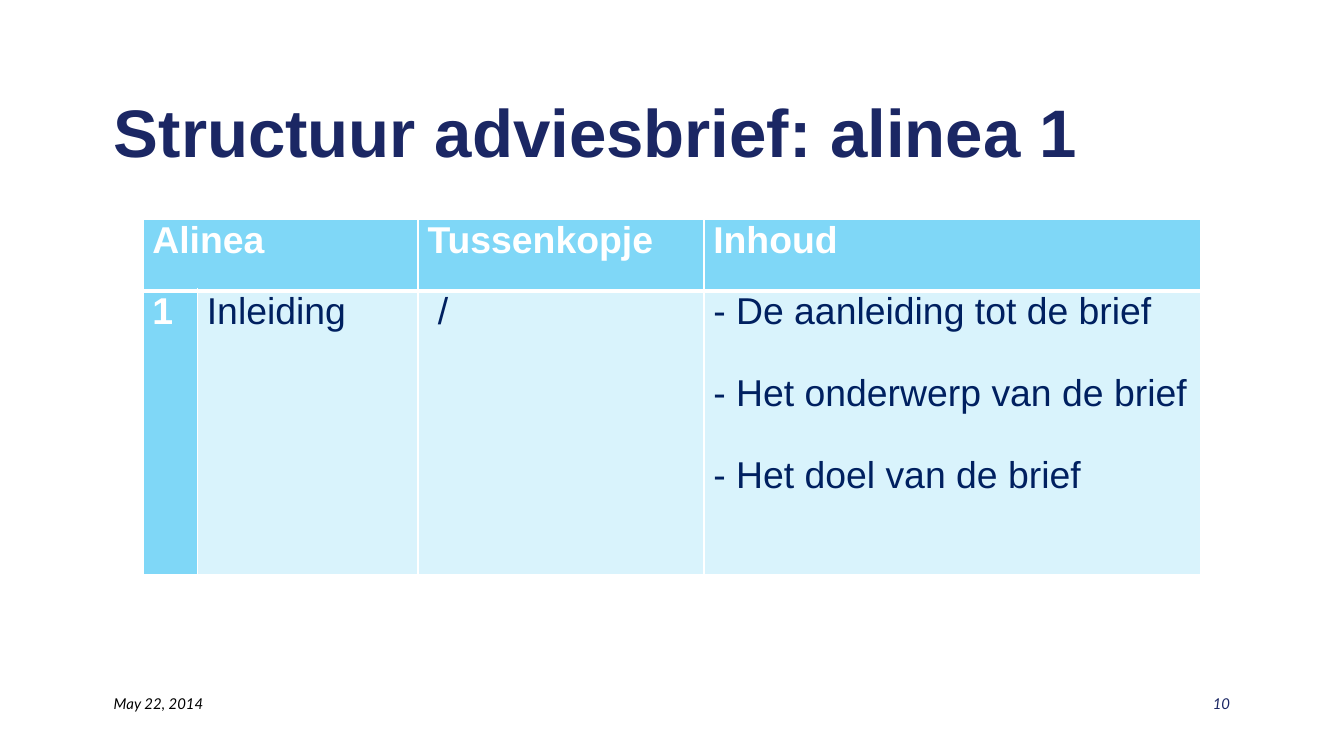
import lxml.etree
import pptx
import pptx.dml.color
import pptx.enum.text
import pptx.oxml.ns
import pptx.util

Cm = pptx.util.Cm
Pt = pptx.util.Pt
ALIGN = pptx.enum.text.PP_ALIGN
ANCHOR = pptx.enum.text.MSO_ANCHOR
qn = pptx.oxml.ns.qn

COLOURS = {
    "title": "1B2764",
    "body": "002060",
    "accent": "00B0F0",
    "white": "FFFFFF",
    "black": "000000",
}

TITLE = "Structuur adviesbrief: alinea 1"
ROWS = [
    [["Alinea"], [], ["Tussenkopje"], ["Inhoud"]],
    [
        ["1"],
        ["Inleiding"],
        [" /"],
        [
            "- De aanleiding tot de brief",
            "- Het onderwerp van de brief",
            "- Het doel van de brief",
        ],
    ],
]
COLUMN_WIDTHS = [1.03, 4.17, 5.4, 9.4]
ROW_HEIGHTS = [1.35, 5.37]
HEADER_OPACITY = 50
BODY_OPACITY = 15

# text, left, alignment, colour
FOOTERS = [
    ("May 22, 2014", 1.9, ALIGN.LEFT, "black"),
    ("10", 18.21, ALIGN.RIGHT, "title"),
]


def rgb(name):
    return pptx.dml.color.RGBColor.from_string(COLOURS[name])


def add_run(paragraph, text, font_name, size, colour, bold=False, italic=False):
    run = paragraph.add_run()
    run.text = text
    run.font.name = font_name
    run.font.size = Pt(size)
    run.font.color.rgb = rgb(colour)
    run.font.bold = bold
    run.font.italic = italic


def fill_cell(cell, opacity):
    cell.fill.solid()
    cell.fill.fore_color.rgb = rgb("accent")
    colour = cell._tc.tcPr.find(".//" + qn("a:srgbClr"))
    lxml.etree.SubElement(colour, qn("a:alpha"), val=str(opacity * 1000))


def add_borders(cell, widths):
    """Draw white borders; widths are points for left, right, top, bottom."""
    for index, (side, width) in enumerate(zip("LRTB", widths)):
        line = lxml.etree.Element(qn("a:ln" + side), w=str(Pt(width)))
        fill = lxml.etree.SubElement(line, qn("a:solidFill"))
        lxml.etree.SubElement(fill, qn("a:srgbClr"), val=COLOURS["white"])
        cell._tc.tcPr.insert(index, line)


def add_title(slide):
    title = slide.shapes.title
    title.left, title.top = Cm(1.9), Cm(1.27)
    title.width, title.height = Cm(21.6), Cm(2.39)
    title.text_frame.vertical_anchor = ANCHOR.MIDDLE
    paragraph = title.text_frame.paragraphs[0]
    paragraph.alignment = ALIGN.LEFT
    add_run(paragraph, TITLE, "Arial", 36, "title", bold=True)


def add_structure_table(slide):
    table = slide.shapes.add_table(
        len(ROWS), len(COLUMN_WIDTHS), Cm(2.7), Cm(4.15),
        Cm(sum(COLUMN_WIDTHS)), Cm(sum(ROW_HEIGHTS)),
    ).table
    table.horz_banding = False
    for column, width in zip(table.columns, COLUMN_WIDTHS):
        column.width = Cm(width)
    for row, height in zip(table.rows, ROW_HEIGHTS):
        row.height = Cm(height)
    table.cell(0, 0).merge(table.cell(0, 1))

    for row_index, row in enumerate(ROWS):
        for column_index, lines in enumerate(row):
            cell = table.cell(row_index, column_index)
            is_header = row_index == 0 or column_index == 0
            cell.margin_left = cell.margin_right = Cm(0.18)
            cell.margin_top = cell.margin_bottom = 0
            cell.vertical_anchor = ANCHOR.TOP
            fill_cell(cell, HEADER_OPACITY if is_header else BODY_OPACITY)
            add_borders(cell, (1, 1, 1, 3) if row_index == 0 else (1, 1, 3, 1))
            for line_index, text in enumerate(lines):
                if line_index == 0:
                    paragraph = cell.text_frame.paragraphs[0]
                else:
                    paragraph = cell.text_frame.add_paragraph()
                    paragraph.space_before = Pt(21.5)
                add_run(paragraph, text, "Arial", 20,
                        "white" if is_header else "body", bold=is_header)


def add_footers(slide):
    for text, left, alignment, colour in FOOTERS:
        box = slide.shapes.add_textbox(Cm(left), Cm(13), Cm(5.29), Cm(0.97))
        box.text_frame.word_wrap = True
        paragraph = box.text_frame.paragraphs[0]
        paragraph.alignment = alignment
        add_run(paragraph, text, "Lato", 8, colour, italic=True)


def main():
    presentation = pptx.Presentation()
    presentation.slide_width = Cm(25.4)
    presentation.slide_height = Cm(14.29)
    slide = presentation.slides.add_slide(presentation.slide_layouts[5])
    add_title(slide)
    add_structure_table(slide)
    add_footers(slide)
    presentation.save("out.pptx")


if __name__ == "__main__":
    main()
